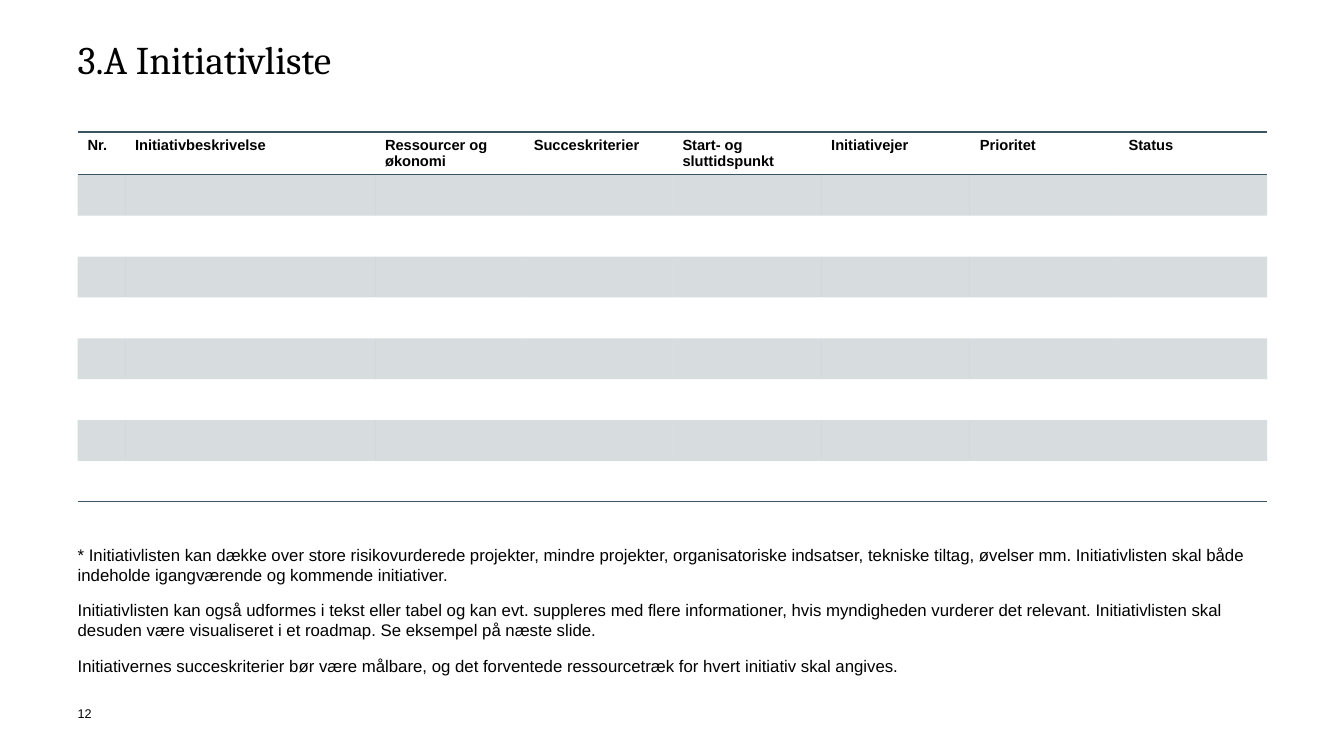
from lxml.etree import SubElement
from pptx import Presentation
from pptx.dml.color import RGBColor
from pptx.enum.text import MSO_ANCHOR, MSO_AUTO_SIZE, PP_ALIGN
from pptx.oxml import parse_xml
from pptx.oxml.ns import nsdecls, qn
from pptx.util import Inches, Pt

COLORS = {"text": "000000", "slate": "3B5463"}
LEFT, WIDTH = 0.77, 11.8
HEADINGS = [
    "Nr.", "Initiativbeskrivelse", "Ressourcer og økonomi", "Succeskriterier",
    "Start- og sluttidspunkt", "Initiativejer", "Prioritet", "Status",
]
NOTES = [
    "* Initiativlisten kan dække over store risikovurderede projekter, mindre projekter, "
    "organisatoriske indsatser, tekniske tiltag, øvelser mm. Initiativlisten skal både "
    "indeholde igangværende og kommende initiativer.",
    "Initiativlisten kan også udformes i tekst eller tabel og kan evt. suppleres med flere "
    "informationer, hvis myndigheden vurderer det relevant. Initiativlisten skal desuden "
    "være visualiseret i et roadmap. Se eksempel på næste slide.",
    "Initiativernes succeskriterier bør være målbare, og det forventede ressourcetræk for "
    "hvert initiativ skal angives.",
]
NO_STYLE = "{2D5ABB26-0587-4C30-8999-92F81FD0307C}"


def add_span(para, text, size, font="Arial", bold=False):
    span = para.add_run()
    span.text = text
    span.font.size = Pt(size)
    span.font.name = font
    span.font.bold = bold
    span.font.color.rgb = RGBColor.from_string(COLORS["text"])


def prepare_box(shape, box):
    shape.left, shape.top, shape.width, shape.height = map(Inches, box)
    frame = shape.text_frame
    frame.margin_left = frame.margin_right = 0
    frame.margin_top = frame.margin_bottom = 0
    frame.word_wrap = True
    frame.auto_size = MSO_AUTO_SIZE.NONE
    frame.vertical_anchor = MSO_ANCHOR.TOP
    return frame


def fill_title(shape, box):
    para = prepare_box(shape, box).paragraphs[0]
    para.alignment = PP_ALIGN.LEFT
    para.line_spacing = 0.9
    add_span(para, "3.A Initiativliste", 28, "Cambria")


def fill_notes(shape, box):
    frame = prepare_box(shape, box)
    for index, note in enumerate(NOTES):
        para = frame.add_paragraph() if index else frame.paragraphs[0]
        properties = para._p.get_or_add_pPr()
        properties.set("marL", "0")
        properties.set("indent", "0")
        SubElement(properties, qn("a:buNone"))
        para.space_before = Pt(11 if index else 0)
        add_span(para, note, 12)


def add_page_number(page, box):
    shape = page.shapes.add_textbox(*map(Inches, box))
    add_span(prepare_box(shape, box).paragraphs[0], "12", 9)


def set_borders(cell, sides):
    for position, side in enumerate(sides):
        line = parse_xml(
            f'<a:{side} {nsdecls("a")} w="12700"><a:solidFill>'
            f'<a:srgbClr val="{COLORS["slate"]}"/></a:solidFill></a:{side}>'
        )
        cell._tc.get_or_add_tcPr().insert(position, line)


def shade(cell, banded):
    if not banded:
        cell.fill.background()
        return
    cell.fill.solid()
    cell.fill.fore_color.rgb = RGBColor.from_string(COLORS["slate"])
    color = cell._tc.tcPr.find(".//" + qn("a:srgbClr"))
    SubElement(color, qn("a:alpha")).set("val", "20000")


def add_initiative_table(page, box, row_count=9):
    frame = page.shapes.add_table(row_count, len(HEADINGS), *map(Inches, box))
    table = frame.table
    table.first_row = table.horz_banding = False
    table._tbl.tblPr.find(qn("a:tableStyleId")).text = NO_STYLE
    narrow = [0.47, 2.48]
    equal_count = len(HEADINGS) - len(narrow)
    equal = (box[2] - sum(narrow)) / equal_count
    for column, width in zip(table.columns, narrow + [equal] * equal_count):
        column.width = Inches(width)
    for index, row in enumerate(table.rows):
        row.height = Inches(box[3] / row_count)
        for cell in row.cells:
            shade(cell, index % 2 == 1)
            if index == 0:
                set_borders(cell, ["lnT", "lnB"])
            elif index == row_count - 1:
                set_borders(cell, ["lnB"])
    for cell, heading in zip(table.rows[0].cells, HEADINGS):
        add_span(cell.text_frame.paragraphs[0], heading, 10.5, bold=True)


def build_initiative_page(deck):
    page = deck.slides.add_slide(deck.slide_layouts[1])
    fill_title(page.shapes.title, (LEFT, 0.4, WIDTH, 1.02))
    add_initiative_table(page, (LEFT, 1.31, WIDTH, 3.65))
    fill_notes(page.placeholders[1], (LEFT, 5.4, WIDTH, 1.67))
    add_page_number(page, (LEFT, 7, 0.31, 0.3))


def main():
    deck = Presentation()
    deck.slide_width, deck.slide_height = Inches(13.33), Inches(7.5)
    build_initiative_page(deck)
    deck.save("out.pptx")


if __name__ == "__main__":
    main()
